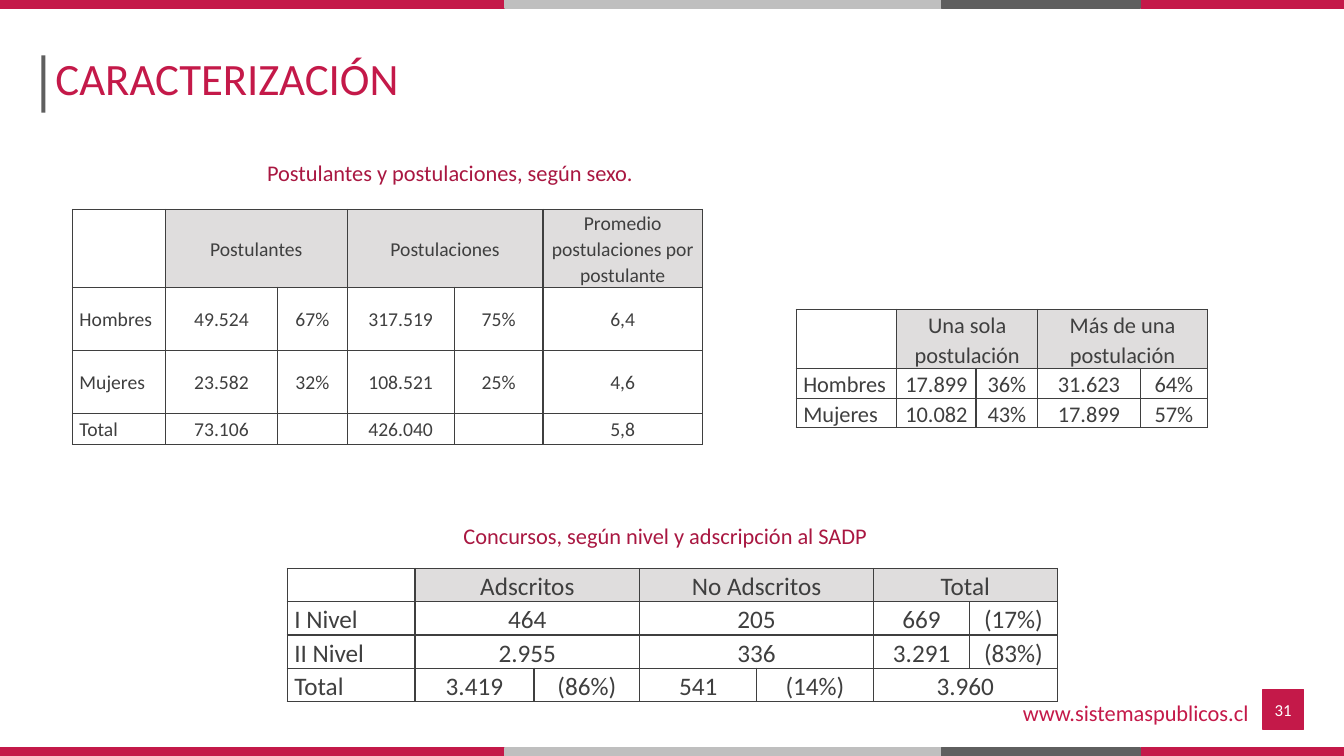
import pptx
import pptx.dml.color
import pptx.enum.shapes
import pptx.enum.text
import pptx.oxml
import pptx.oxml.ns
import pptx.util
from dataclasses import dataclass

Pt = pptx.util.Pt
ALIGN = pptx.enum.text.PP_ALIGN
ANCHOR = pptx.enum.text.MSO_ANCHOR
W, H = 960, 540
BAR_H = 5.8


@dataclass(frozen=True)
class Theme:
    font: str = "Calibri"
    red: str = "C41949"
    dark_red: str = "A91741"
    silver: str = "BFBFBF"
    gray: str = "5F5F5F"
    ink: str = "3F3F3F"
    header: str = "DFDDDD"
    white: str = "FFFFFF"
    title: int = 32
    large: int = 18
    caption: int = 16
    small: int = 14
    page: int = 12


def rgb(color):
    return pptx.dml.color.RGBColor.from_string(color)


class Deck:
    def __init__(self, theme):
        self.theme = theme
        self.prs = pptx.Presentation()
        self.prs.slide_width, self.prs.slide_height = Pt(W), Pt(H)
        self.s = self.prs.slides.add_slide(self.prs.slide_layouts[5])

    def set_text(self, tf, text, size, color, **paragraph_format):
        p = tf.paragraphs[0]
        for name, value in paragraph_format.items():
            setattr(p, name, value)
        r = p.add_run()
        r.text = text
        for name, value in {"name": self.theme.font, "size": Pt(size), "bold": False}.items():
            setattr(r.font, name, value)
        r.font.color.rgb = rgb(color)

    def title(self, text, x, y, w, h):
        sp = self.s.shapes.title
        for name, value in {"left": x, "top": y, "width": w, "height": h}.items():
            setattr(sp, name, Pt(value))
        tf = sp.text_frame
        tf.auto_size = pptx.enum.text.MSO_AUTO_SIZE.NONE
        tf.vertical_anchor = ANCHOR.MIDDLE
        self.set_text(tf, text, self.theme.title, self.theme.red,
                      alignment=ALIGN.LEFT, line_spacing=1.5)

    def rect(self, x, y, w, h, color, outlined=True):
        sp = self.s.shapes.add_shape(pptx.enum.shapes.MSO_SHAPE.RECTANGLE,
                                     Pt(x), Pt(y), Pt(w), Pt(h))
        sp.shadow.inherit = False
        sp.fill.solid()
        sp.fill.fore_color.rgb = rgb(color)
        if outlined:
            sp.line.color.rgb = rgb(color)
            sp.line.width = Pt(1)
        else:
            sp.line.fill.background()

    def text(self, text, x, y, w, h, size, color, align=ALIGN.CENTER, anchor=ANCHOR.TOP):
        tf = self.s.shapes.add_textbox(Pt(x), Pt(y), Pt(w), Pt(h)).text_frame
        tf.word_wrap = True
        tf.vertical_anchor = anchor
        self.set_text(tf, text, size, color, alignment=align)

    def border(self, cell):
        tc_pr = cell._tc.get_or_add_tcPr()
        for side in "LRTB":
            tc_pr.append(pptx.oxml.parse_xml(
                f'<a:ln{side} {pptx.oxml.ns.nsdecls("a")} w="12700"><a:solidFill>'
                f'<a:srgbClr val="{self.theme.ink}"/></a:solidFill></a:ln{side}>'))

    def table(self, x, y, widths, heights, rows, size, anchor=ANCHOR.TOP):
        """Fill a grid; None joins a cell to the one on its left."""
        tbl = self.s.shapes.add_table(len(rows), len(widths), Pt(x), Pt(y),
                                      Pt(sum(widths)), Pt(sum(heights))).table
        tbl.first_row = tbl.horz_banding = False
        for column, width in zip(tbl.columns, widths):
            column.width = Pt(width)
        for row, height in zip(tbl.rows, heights):
            row.height = Pt(height)
        cell_format = {"margin_left": Pt(5), "margin_right": Pt(5), "margin_top": 0,
                       "margin_bottom": 0, "vertical_anchor": anchor}
        for i, values in enumerate(rows):
            for j, value in enumerate(values):
                cell = tbl.cell(i, j)
                for name, setting in cell_format.items():
                    setattr(cell, name, setting)
                self.border(cell)
                if i == 0 and value != "":
                    cell.fill.solid()
                    cell.fill.fore_color.rgb = rgb(self.theme.header)
                else:
                    cell.fill.background()
                if value is None:
                    tbl.cell(i, j - 1).merge(cell)
                elif value:
                    self.set_text(cell.text_frame, value, size, self.theme.ink,
                                  alignment=ALIGN.CENTER if j else ALIGN.JUSTIFY,
                                  line_spacing=1.1, space_after=Pt(8))


def main():
    t = Theme()
    deck = Deck(t)

    badge = (902.2, 492.5, 28.8, 28.8)
    deck.rect(*badge, t.red)
    for y in (0, H - BAR_H):
        for x, w, color in ((0, W, t.red), (360.7, 453.6, t.silver), (672.5, 141.8, t.gray)):
            deck.rect(x, y, w, BAR_H, color)
    deck.rect(29.5, 39.6, 2.9, 41, t.gray, outlined=False)
    deck.text("www.sistemaspublicos.cl", 699, 496, 200, 24.5, t.caption, t.red, ALIGN.RIGHT)
    deck.text("31", *badge, t.page, t.white, anchor=ANCHOR.MIDDLE)
    deck.title("CARACTERIZACIÓN", 32.4, 30.2, 771, 31)

    deck.text("Postulantes y postulaciones, según sexo.", 96.5, 110.2, 450, 26.6,
              t.caption, t.dark_red)
    deck.table(51.8, 149.6, (66.5, 80, 49.7, 76.5, 63.5, 113.8), (55, 45.2, 45.2, 22), (
        ("", "Postulantes", None, "Postulaciones", None,
         "Promedio postulaciones por postulante"),
        ("Hombres", "49.524", "67%", "317.519", "75%", "6,4"),
        ("Mujeres", "23.582", "32%", "108.521", "25%", "4,6"),
        ("Total", "73.106", "", "426.040", "", "5,8"),
    ), t.small, ANCHOR.MIDDLE)

    deck.table(205.2, 406, (91.2, 85, 75.6, 83.5, 83.5, 68.8, 62.4), (23.8,) * 4, (
        ("", "Adscritos", None, "No Adscritos", None, "Total", None),
        ("I Nivel", "464", None, "205", None, "669", "(17%)"),
        ("II Nivel", "2.955", None, "336", None, "3.291", "(83%)"),
        ("Total", "3.419", "(86%)", "541", "(14%)", "3.960", None),
    ), t.large)
    deck.text("Concursos, según nivel y adscripción al SADP", 234.7, 369.4, 481, 26.6,
              t.caption, t.dark_red)

    deck.table(568.8, 221, (71.8, 56.6, 44, 73.4, 48), (42.2, 21.2, 21.2), (
        ("", "Una sola postulación", None, "Más de una postulación", None),
        ("Hombres", "17.899", "36%", "31.623", "64%"),
        ("Mujeres", "10.082", "43%", "17.899", "57%"),
    ), t.caption)

    deck.prs.save("out.pptx")


if __name__ == "__main__":
    main()
